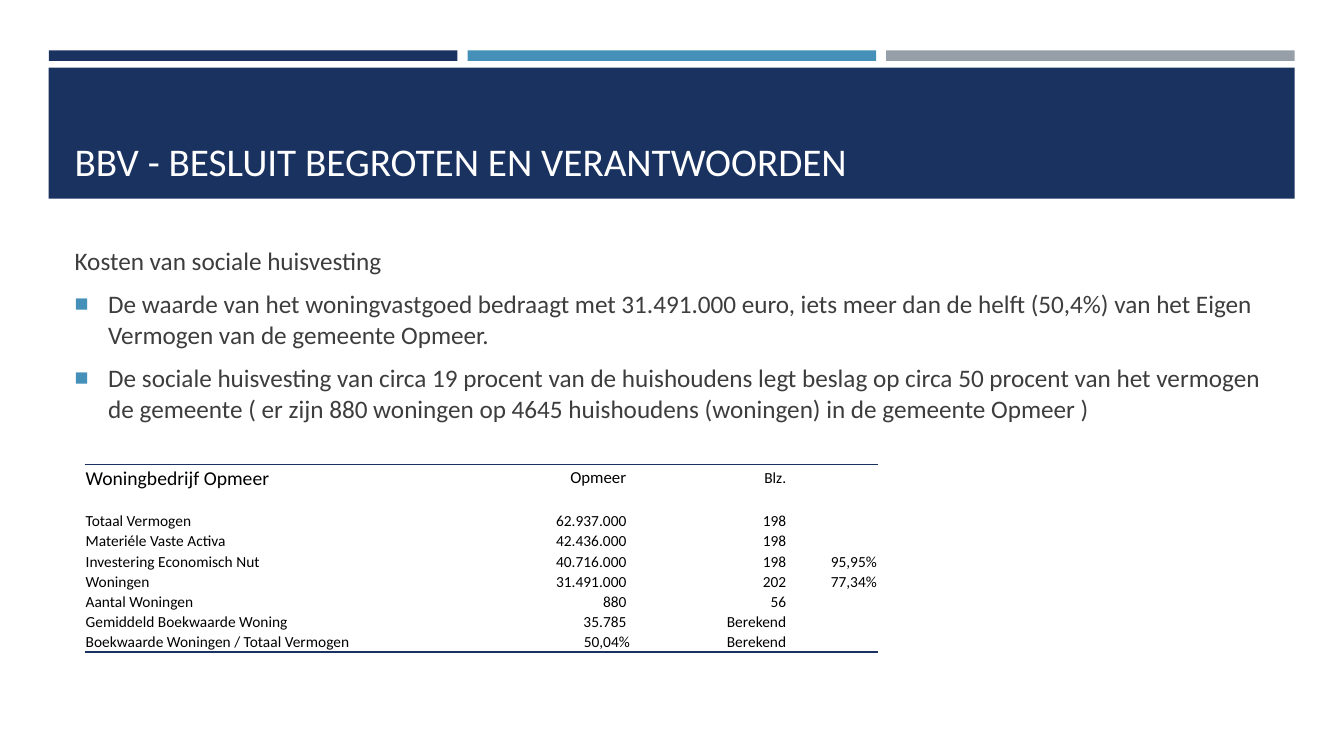
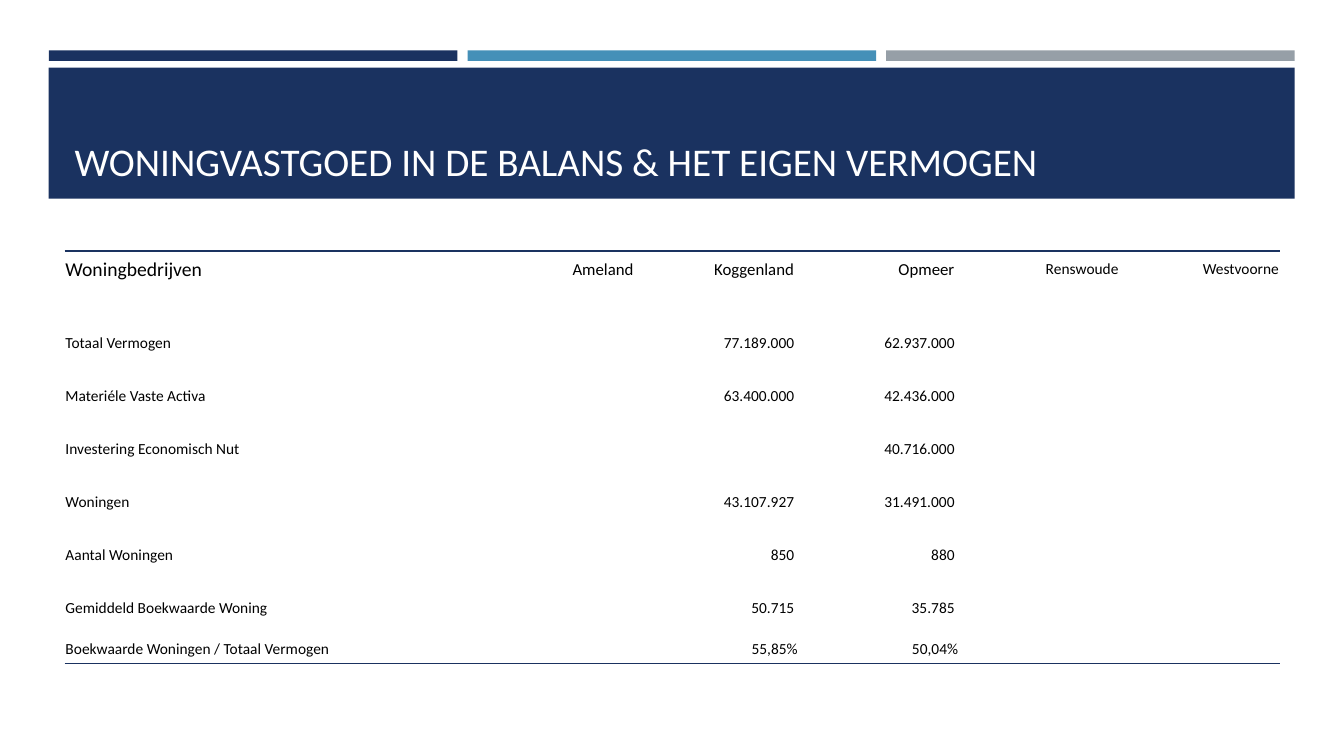
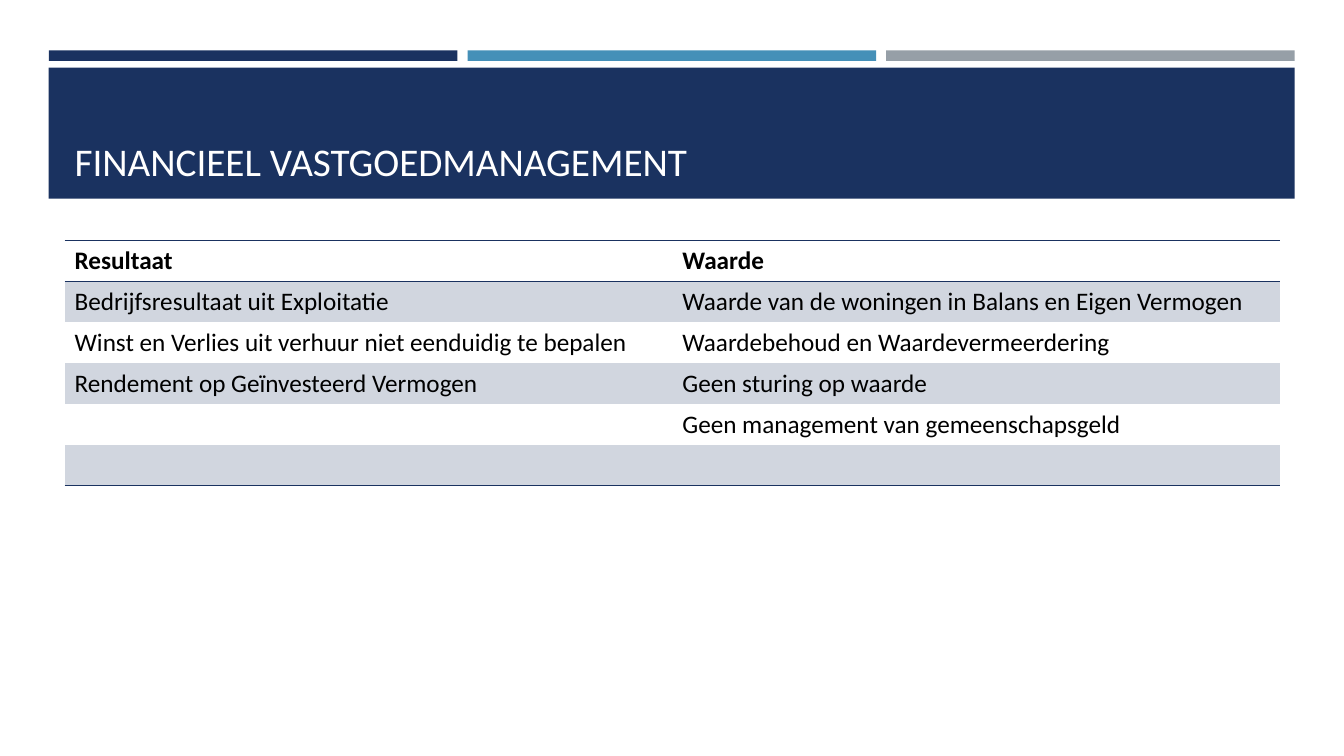
from lxml.etree import SubElement
from pptx import Presentation
from pptx.dml.color import RGBColor
from pptx.enum.shapes import MSO_SHAPE as SHAPE
from pptx.enum.text import MSO_ANCHOR as ANCHOR, MSO_AUTO_SIZE as AUTO, PP_ALIGN as ALIGN
from pptx.oxml.ns import qn
from pptx.util import Pt

NAVY = RGBColor(0x1A, 0x32, 0x60)
BLUE = RGBColor(0x45, 0x90, 0xB8)
GREY = RGBColor(0x96, 0x9F, 0xA7)
PALE = RGBColor(0xD1, 0xD6, 0xDF)
INK = RGBColor(0x3D, 0x3D, 0x3D)
WHITE = RGBColor(0xFF, 0xFF, 0xFF)
BLACK = RGBColor(0, 0, 0)
FONT = "Calibri"
PLAIN_TABLE = "{2D5ABB26-0587-4C30-8999-92F81FD0307C}"
LEFT, WIDTH = 46.1, 868.3

LABELS = ["", "Totaal Vermogen", "Materiéle Vaste Activa", "Investering Economisch Nut",
          "Woningen", "Aantal Woningen", "Gemiddeld Boekwaarde Woning",
          "Boekwaarde Woningen / Totaal Vermogen"]
OPMEER = ["Opmeer ", "", "62.937.000 ", "42.436.000 ", "40.716.000 ", "31.491.000 ",
          "880 ", "35.785 ", "50,04%"]
KOGGENLAND = ["Koggenland ", "", "77.189.000 ", "63.400.000 ", "", "43.107.927 ",
              "850 ", "50.715 ", "55,85%"]
PAGES = ["Blz.", "", "198", "198", "198", "202", "56", "Berekend", "Berekend"]
SHARES = ["", "", "", "", "95,95%", "77,34%", "", "", ""]
BLANK = [""] * 8


def write(p, text, size=18, color=BLACK, bold=False, align=ALIGN.LEFT):
    p.alignment = align
    if not text:
        p._p.get_or_add_endParaRPr().set("sz", str(size * 100))
        return
    r = p.add_run()
    r.text = text
    r.font.name, r.font.size, r.font.bold = FONT, Pt(size), bold
    r.font.color.rgb = color


def solid(parent, color):
    SubElement(SubElement(parent, qn("a:solidFill")), qn("a:srgbClr"), val=str(color))


class Deck:
    def __init__(self):
        self.prs = Presentation()
        self.prs.slide_width, self.prs.slide_height = Pt(960), Pt(540)
        self.s = None

    def slide(self, title, layout=5):
        self.s = self.prs.slides.add_slide(self.prs.slide_layouts[layout])
        sp = self.s.shapes.title
        tf = self.place(sp, LEFT, 55.4, WIDTH, 79.9)
        tf.vertical_anchor = ANCHOR.BOTTOM
        write(tf.paragraphs[0], title, size=28, color=WHITE)

    def place(self, sp, x, y, w, h):
        sp.left, sp.top, sp.width, sp.height = Pt(x), Pt(y), Pt(w), Pt(h)
        sp.text_frame.auto_size = AUTO.NONE
        sp.text_frame.word_wrap = True
        return sp.text_frame

    def master_band(self, x, y, w, h, color):
        sp = self.s.shapes.add_shape(SHAPE.RECTANGLE, Pt(x), Pt(y), Pt(w), Pt(h))
        sp.shadow.inherit = False
        sp.fill.solid()
        sp.fill.fore_color.rgb = color
        sp.line.fill.background()
        self.prs.slide_master.shapes._spTree.insert(2, sp._element)

    def bands(self):
        for i, color in enumerate((NAVY, BLUE, GREY)):
            self.master_band(35 + i * 299, 36, 291.8, 7.6, color)
        self.master_band(34.8, 48.4, 890, 93.6, NAVY)

    def body(self, lead, bullets):
        tf = self.place(self.s.placeholders[1], LEFT, 171.4, WIDTH, 289.4)
        tf.vertical_anchor = ANCHOR.TOP
        for i, text in enumerate([lead] + bullets):
            p = tf.add_paragraph() if i else tf.paragraphs[0]
            write(p, text, color=INK)
            p.space_before, p.space_after = Pt(3.6), Pt(6)
            self.bullet(p, 24 if i else 0)

    def bullet(self, p, indent):
        pPr = p._p.get_or_add_pPr()
        pPr.set("marL", str(Pt(indent)))
        pPr.set("indent", str(Pt(-indent)))
        if indent:
            SubElement(SubElement(pPr, qn("a:buClr")), qn("a:srgbClr"), val=str(BLUE))
            SubElement(pPr, qn("a:buSzPct"), val="92000")
            SubElement(pPr, qn("a:buChar"), char="■")
        else:
            SubElement(pPr, qn("a:buNone"))

    def grid(self, x, y, widths, heights):
        frame = self.s.shapes.add_table(len(heights), len(widths), Pt(x), Pt(y),
                                        Pt(sum(widths)), Pt(sum(heights)))
        table = frame.table
        table.first_row = table.horz_banding = False
        table._tbl.tblPr.find(qn("a:tableStyleId")).text = PLAIN_TABLE
        for column, w in zip(table.columns, widths):
            column.width = Pt(w)
        for row, h in zip(table.rows, heights):
            row.height = Pt(h)
        return table

    def cell(self, cell, text, top=False, bottom=False, fill=None, **style):
        tcPr = cell._tc.get_or_add_tcPr()
        for tag, shown in (("a:lnT", top), ("a:lnB", bottom)):
            if shown:
                solid(SubElement(tcPr, qn(tag), w=str(Pt(1))), NAVY)
        if fill:
            cell.fill.solid()
            cell.fill.fore_color.rgb = fill
        else:
            cell.fill.background()
        write(cell.text_frame.paragraphs[0], text, **style)

    def ledger(self, x, y, widths, heights, columns, head_sizes):
        table = self.grid(x, y, widths, heights)
        last = len(heights) - 1
        for j, column in enumerate(columns):
            for i, text in enumerate(column):
                c = table.cell(i, j)
                c.margin_left = c.margin_right = c.margin_top = Pt(0.7)
                c.margin_bottom = 0
                c.vertical_anchor = ANCHOR.MIDDLE
                self.cell(c, text, top=i == 0, bottom=i == last,
                          size=11 if i else head_sizes[j],
                          align=ALIGN.RIGHT if j else ALIGN.LEFT)

    def banded(self, x, y, widths, row_height, rows):
        table = self.grid(x, y, widths, [row_height] * len(rows))
        for i, row in enumerate(rows):
            for j, text in enumerate(row):
                self.cell(table.cell(i, j), text, top=i == 0,
                          bottom=i in (0, len(rows) - 1),
                          fill=PALE if i % 2 else None, bold=i == 0)


def main():
    d = Deck()
    d.slide("BBV - BESLUIT BEGROTEN EN VERANTWOORDEN", layout=1)
    d.bands()
    d.body("Kosten van sociale huisvesting", [
        "De waarde van het woningvastgoed bedraagt met 31.491.000 euro, iets meer dan de helft "
        "(50,4%) van het Eigen Vermogen van de gemeente Opmeer.",
        "De sociale huisvesting van circa 19 procent van de huishoudens legt beslag op circa 50 "
        "procent van het vermogen de gemeente ( er zijn 880 woningen op 4645 huishoudens "
        "(woningen) in de gemeente Opmeer )"])
    d.ledger(60.5, 332, [278.6, 111.6, 111.6, 64.8], [18.6, 13.8] + [14.4] * 7,
             [["Woningbedrijf Opmeer"] + LABELS, OPMEER, PAGES, SHARES], [14, 12, 11, 11])

    d.slide("WONINGVASTGOED IN DE BALANS & HET EIGEN VERMOGEN")
    d.ledger(LEFT, 179.3, [295.3] + [114.6] * 5, [26, 20.9] + [37.8] * 6 + [20.9],
             [["Woningbedrijven"] + LABELS, ["Ameland "] + BLANK, KOGGENLAND, OPMEER,
              ["Renswoude"] + BLANK, ["Westvoorne"] + BLANK], [14, 12, 12, 12, 11, 11])

    d.slide("FINANCIEEL VASTGOEDMANAGEMENT")
    d.banded(LEFT, 171.8, [WIDTH / 2] * 2, 29.2, [
        ("Resultaat", "Waarde"),
        ("Bedrijfsresultaat uit Exploitatie", "Waarde van de woningen in Balans en Eigen Vermogen"),
        ("Winst en Verlies uit verhuur niet eenduidig te bepalen",
         "Waardebehoud en Waardevermeerdering"),
        ("Rendement op Geïnvesteerd Vermogen", "Geen sturing op waarde"),
        ("", "Geen management van gemeenschapsgeld"),
        ("", "")])
    d.prs.save("out.pptx")


if __name__ == "__main__":
    main()
